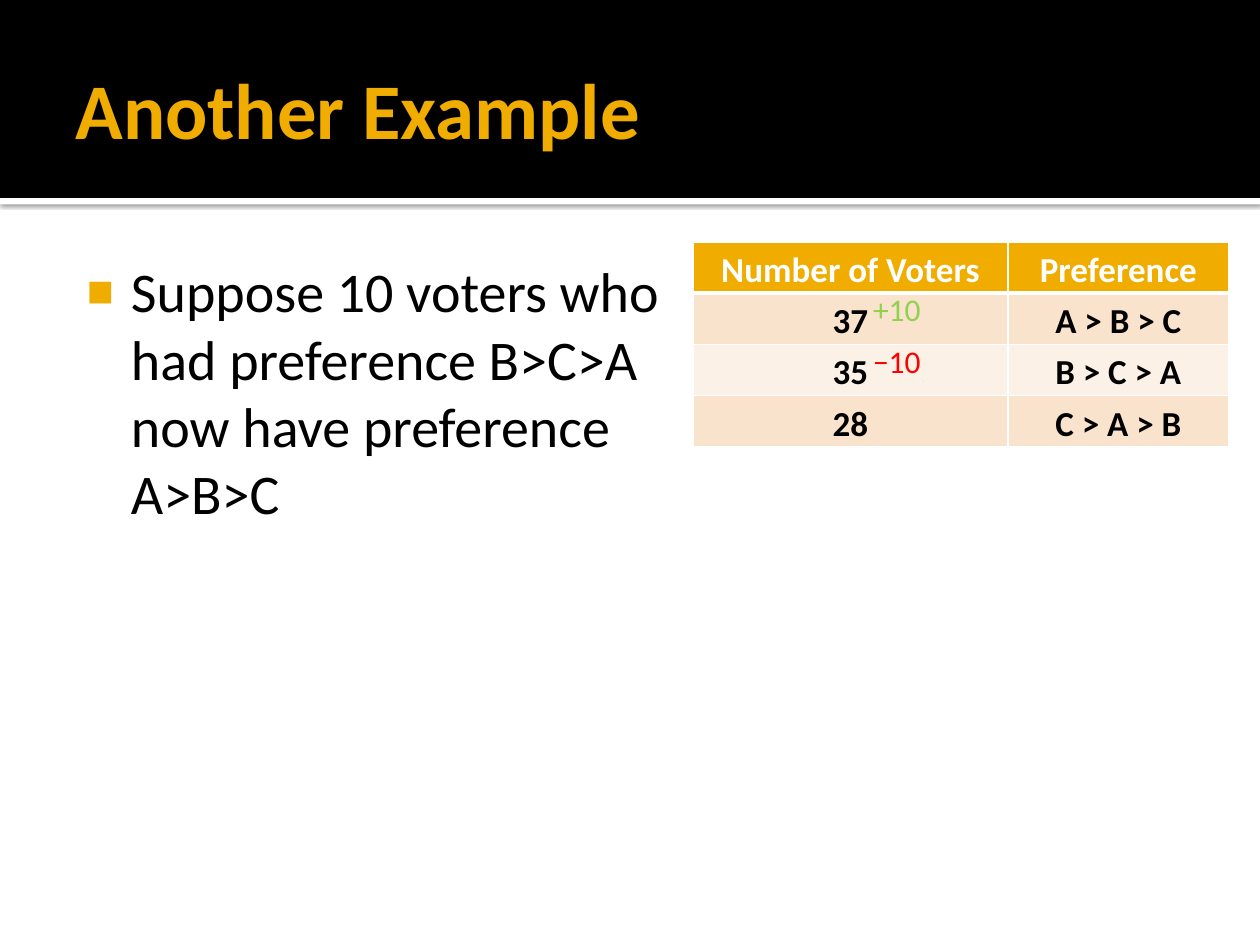
from lxml.etree import SubElement
from pptx import Presentation
from pptx.dml.color import RGBColor
from pptx.enum.shapes import MSO_SHAPE
from pptx.enum.text import MSO_ANCHOR, MSO_AUTO_SIZE, PP_ALIGN
from pptx.oxml import parse_xml
from pptx.oxml.ns import nsdecls, qn
from pptx.util import Cm, Pt

COLORS = {
    "gold": "F0AD00",
    "black": "000000",
    "white": "FFFFFF",
    "dark row": "F9E3CC",
    "light row": "FCF1E7",
    "gain": "92D050",
    "loss": "FF0000",
}


def set_font(paragraph, size, color, bold=False):
    paragraph.font.name = "Calibri"
    paragraph.font.size = Pt(size)
    paragraph.font.bold = bold
    paragraph.font.color.rgb = RGBColor.from_string(COLORS[color])


def set_border(cell, side, width):
    line = SubElement(cell._tc.get_or_add_tcPr(), qn(f"a:{side}"), w=str(Pt(width)))
    fill = SubElement(line, qn("a:solidFill"))
    SubElement(fill, qn("a:srgbClr"), val=COLORS["white"])


presentation = Presentation()
presentation.slide_width = Cm(25.4)
presentation.slide_height = Cm(19.05)
slide = presentation.slides.add_slide(presentation.slide_layouts[1])
shapes = slide.shapes

# Header band and the shadowed white strip below it, behind the text
for position, (top, height, color) in enumerate([(3.99, 0.13, "white"), (0, 3.99, "black")]):
    band = shapes.add_shape(MSO_SHAPE.RECTANGLE, 0, Cm(top), Cm(25.4), Cm(height))
    band.shadow.inherit = False
    band.fill.solid()
    band.fill.fore_color.rgb = RGBColor.from_string(COLORS[color])
    band.line.fill.background()
    shapes._spTree.insert(2 + position, band._element)
    if color == "white":
        effects = band._element.spPr.find(qn("a:effectLst"))
        effects.append(parse_xml(
            f'<a:outerShdw {nsdecls("a")} blurRad="{Pt(2.5)}" dist="{Pt(0.8)}" dir="5400000"'
            ' algn="tl" rotWithShape="0"><a:srgbClr val="000000"><a:alpha val="60000"/>'
            "</a:srgbClr></a:outerShdw>"))

# Title
title = shapes.title
title.left, title.top, title.width, title.height = Cm(1.27), Cm(0.43), Cm(22.86), Cm(3.48)
frame = title.text_frame
frame.text = "Another Example"
frame.auto_size = MSO_AUTO_SIZE.NONE
frame.vertical_anchor = MSO_ANCHOR.MIDDLE
frame.margin_left = Cm(0.25)
frame.margin_right = frame.margin_top = frame.margin_bottom = Cm(0.13)
frame.paragraphs[0].alignment = PP_ALIGN.LEFT
set_font(frame.paragraphs[0], 45, "gold", bold=True)

# Bulleted body
body = slide.placeholders[1]
body.left, body.top, body.width, body.height = Cm(1.27), Cm(4.93), Cm(22.86), Cm(12.85)
frame = body.text_frame
frame.auto_size = MSO_AUTO_SIZE.NONE
frame.margin_left, frame.margin_right = Cm(0.15), Cm(0.25)
frame.margin_top, frame.margin_bottom = Cm(0.25), Cm(0.13)
paragraph = frame.paragraphs[0]
paragraph.text = "Suppose 10 voters who\vhad preference B>C>A\vnow have preference\vA>B>C"
paragraph.space_before = Pt(0)
set_font(paragraph, 32, "black")
properties = paragraph._p.get_or_add_pPr()
properties.set("marL", str(Cm(1.22)))
properties.set("indent", str(Cm(-0.89)))
bullet_color = SubElement(properties, qn("a:buClr"))
SubElement(bullet_color, qn("a:srgbClr"), val=COLORS["gold"])
SubElement(properties, qn("a:buSzPct"), val="80000")
SubElement(properties, qn("a:buChar"), char="■")
# The default run style has to follow the bullet settings
properties.append(properties.find(qn("a:defRPr")))

# Voter table
rows = [
    ("Number of Voters", "Preference"),
    ("37", "A > B > C"),
    ("35", "B > C > A"),
    ("28", "C > A > B"),
]
row_fills = ["gold", "dark row", "light row", "dark row"]
table = shapes.add_table(4, 2, Cm(13.97), Cm(4.88), Cm(10.8), Cm(4.12)).table
table.columns[0].width, table.columns[1].width = Cm(6.35), Cm(4.45)
for row_index, (texts, row_fill) in enumerate(zip(rows, row_fills)):
    table.rows[row_index].height = Cm(1.03)
    is_header = row_index == 0
    for column_index, text in enumerate(texts):
        cell = table.cell(row_index, column_index)
        cell.text = text
        cell.vertical_anchor = MSO_ANCHOR.MIDDLE
        cell.margin_left = cell.margin_right = Cm(0.18)
        cell.margin_top = cell.margin_bottom = 0
        paragraph = cell.text_frame.paragraphs[0]
        paragraph.alignment = PP_ALIGN.CENTER
        paragraph.line_spacing = 1.15
        set_font(paragraph, 20, "white" if is_header else "black", bold=True)
        for side in ("lnL", "lnR", "lnT", "lnB"):
            thick = (is_header and side == "lnB") or (row_index == 1 and side == "lnT")
            set_border(cell, side, 3 if thick else 1)
        cell.fill.solid()
        cell.fill.fore_color.rgb = RGBColor.from_string(COLORS[row_fill])

# Changes in the vote counts
for index, (text, color) in enumerate([("+10", "gain"), ("−10", "loss")]):
    change = shapes.add_textbox(Cm(17.35), Cm(5.72 + 1.06 * index), Cm(1.47), Cm(1.03))
    change.text_frame.text = text
    change.text_frame.word_wrap = False
    change.text_frame.auto_size = MSO_AUTO_SIZE.SHAPE_TO_FIT_TEXT
    set_font(change.text_frame.paragraphs[0], 18, color)

presentation.save("out.pptx")
